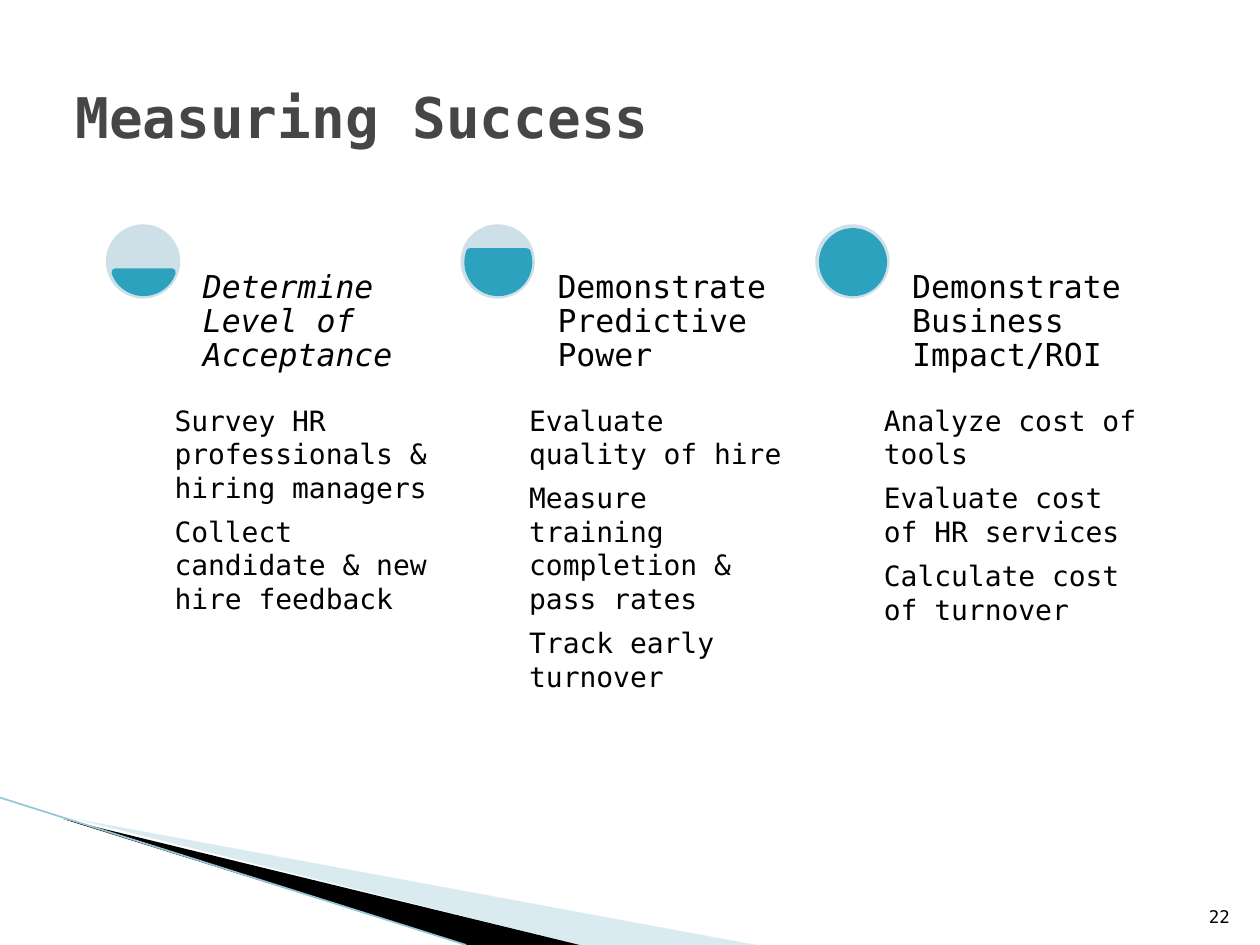
from lxml import etree
from pptx import Presentation
from pptx.dml.color import RGBColor
from pptx.enum.shapes import MSO_CONNECTOR, MSO_SHAPE
from pptx.enum.text import MSO_ANCHOR, PP_ALIGN
from pptx.oxml.ns import qn
from pptx.util import Inches, Pt

TOP, MID, LOW = MSO_ANCHOR.TOP, MSO_ANCHOR.MIDDLE, MSO_ANCHOR.BOTTOM
LEFT, RIGHT = PP_ALIGN.LEFT, PP_ALIGN.RIGHT
DISC, CHORD = MSO_SHAPE.OVAL, MSO_SHAPE.CHORD
LINE = MSO_CONNECTOR.STRAIGHT
FONT = "DejaVu Sans Mono"
CELL = Inches(0.1)
COLS, ROWS = 100, 75
HUES = {"ink": "000000", "title": "464646", "teal": "2DA2BF",
        "pale": "CDE0E8", "wedge": "A0CBDC", "edge": "97C5D8"}
STEPS = [
    ("Determine Level of Acceptance", True, (11.683, 96.317),
     ["Survey HR professionals & hiring managers",
      "Collect candidate & new hire feedback"]),
    ("Demonstrate Predictive Power", False, (204.317, 119.683),
     ["Evaluate quality of hire",
      "Measure training completion & pass rates",
      "Track early turnover"]),
    ("Demonstrate Business Impact/ROI", False, (162, 162),
     ["Analyze cost of tools", "Evaluate cost of HR services",
      "Calculate cost of turnover"]),
]


class Board:
    """Draw styled elements on one slide, placed on a grid of 100 by 75 cells."""

    def __init__(self, deck):
        deck.slide_width, deck.slide_height = COLS * CELL, ROWS * CELL
        self.shapes = deck.slides.add_slide(deck.slide_layouts[6]).shapes

    def hue(self, name):
        return RGBColor.from_string(HUES[name])

    def grid(self, *cells):
        return [round(cell * CELL) for cell in cells]

    def paint(self, shape, hue, edge=0):
        shape.shadow.inherit = False
        shape.fill.solid()
        shape.fill.fore_color.rgb = self.hue(hue)
        if edge:
            shape.line.color.rgb = self.hue(hue)
            shape.line.width = Pt(edge)
        else:
            shape.line.fill.background()

    def form(self, kind, box, hue, edge=0, bends=()):
        shape = self.shapes.add_shape(kind, *self.grid(*box))
        for spot, bend in enumerate(bends):
            shape.adjustments[spot] = bend
        self.paint(shape, hue, edge)

    def wedge(self, points, hue, alpha=100):
        pen = self.shapes.build_freeform(*points[0], scale=CELL)
        pen.add_line_segments(points[1:])
        shape = pen.convert_to_shape()
        self.paint(shape, hue)
        if alpha < 100:
            tint = shape.fill._xPr.find(".//" + qn("a:srgbClr"))
            etree.SubElement(tint, qn("a:alpha"), val=str(alpha * 1000))

    def rule(self, ends, hue, width):
        line = self.shapes.add_connector(LINE, *self.grid(*ends))
        line.line.color.rgb = self.hue(hue)
        line.line.width = Pt(width)
        etree.SubElement(line._element.spPr, qn("a:effectLst"))

    def text(self, box, lines, size, hue="ink", anchor=TOP, align=LEFT,
             pad=(1, 0.5), bold=False, slant=False, lead=1, gap=0):
        frame = self.shapes.add_textbox(*self.grid(*box)).text_frame
        frame.word_wrap = True
        frame.vertical_anchor = anchor
        wide, tall = self.grid(*pad)
        frame.margin_left = frame.margin_right = wide
        frame.margin_top = frame.margin_bottom = tall
        frame.text = "\n".join(lines)
        for para in frame.paragraphs:
            para.alignment = align
            para.line_spacing = lead
            para.space_after = Pt(gap)
            font = para.font
            font.name, font.size = FONT, Pt(size)
            font.bold, font.italic = bold, slant
            font.color.rgb = self.hue(hue)

    def step(self, left, head, slant, bends, notes):
        self.form(DISC, (left, 17.8, 5.9, 5.9), "pale")
        self.form(CHORD, (left + 0.6, 18.4, 4.8, 4.8), "teal", 4.33, bends)
        self.text((left + 5.05, 31.6, 21.9, 27.6), notes, 16,
                  pad=(0.4, 0.4), gap=6)
        self.text((left + 7.2, 24.2, 17.6, 5.9), [head], 18, anchor=LOW,
                  pad=(0.5, 0.5), slant=slant, lead=0.9)


def main():
    deck = Presentation()
    board = Board(deck)
    board.wedge([(5.5, 65.1), (59.5, 75), (45.6, 75), (5.5, 65)], "wedge", 40)
    board.wedge([(5.3, 64.9), (45.7, 75), (37.2, 75), (5.4, 65)], "ink")
    board.rule((0, 63.3, 37, 75), "edge", 0.95)
    board.text((5, 3, 90, 12.5), ["Measuring Success"], 32, "title", MID,
               bold=True)
    board.text((94.6, 70.1, 4, 4), ["22"], 10, anchor=LOW, align=RIGHT)
    for spot, step in enumerate(STEPS):
        board.step(8.4 + 28.15 * spot, *step)
    deck.save("out.pptx")


if __name__ == "__main__":
    main()
